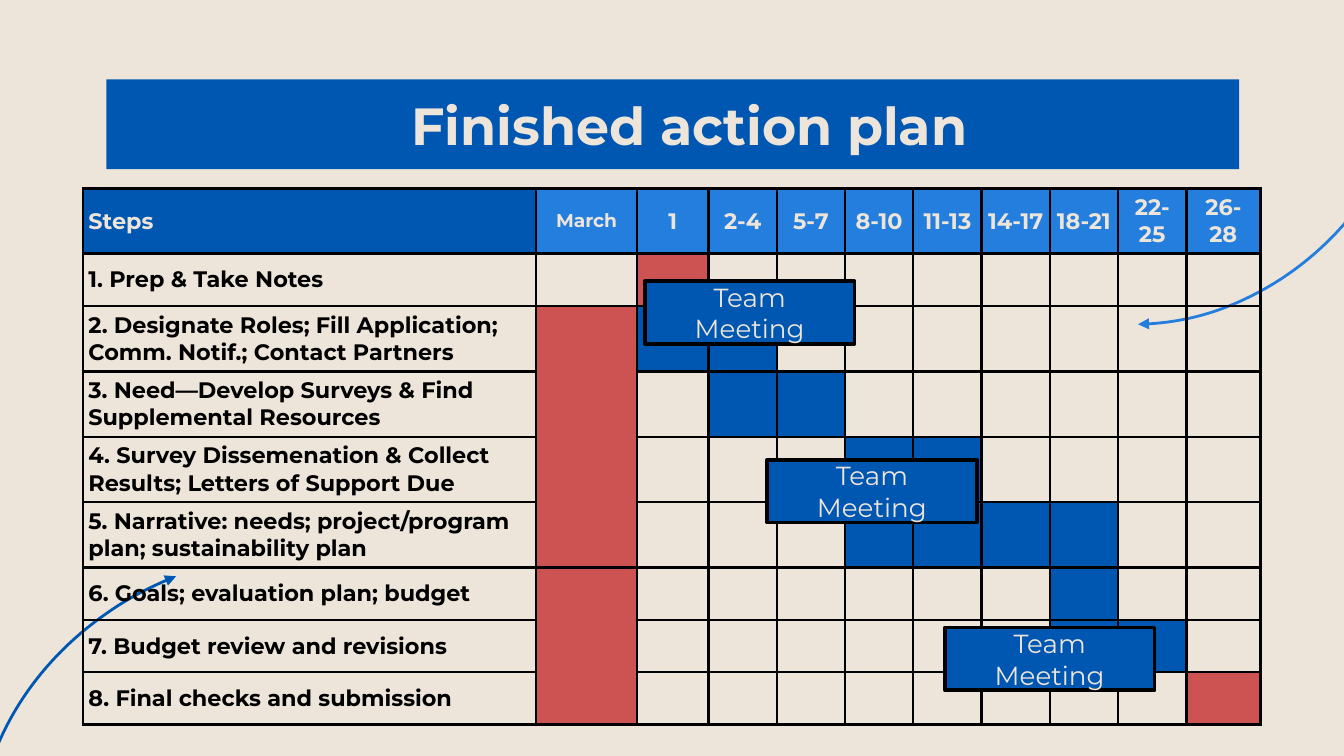
import pptx
import pptx.dml.color
import pptx.enum.shapes
import pptx.enum.text
import pptx.oxml
import pptx.oxml.ns
import pptx.util
from pptx.util import Cm

RGB = pptx.dml.color.RGBColor
CREAM = RGB(0xED, 0xE5, 0xDA)
BLUE = RGB(0x00, 0x57, 0xB2)
SKY = RGB(0x23, 0x7E, 0xDD)
RED = RGB(0xCD, 0x52, 0x52)
BLACK = RGB(0, 0, 0)
FONT = "Montserrat"
SHAPE = pptx.enum.shapes.MSO_SHAPE
ALIGN = pptx.enum.text.PP_ALIGN
MIDDLE = pptx.enum.text.MSO_ANCHOR.MIDDLE

DATES = ["1", "2-4", "5-7", "8-10", "11-13", "14-17", "18-21", "22-25", "26-28"]
# Each step: its text, then first date, last date and colour of its bar
STEPS = [
    ("1. Prep & Take Notes", 0, 0, RED),
    ("2. Designate Roles; Fill Application; Comm. Notif.; Contact Partners", 0, 1, BLUE),
    ("3. Need—Develop Surveys & Find Supplemental Resources", 1, 2, BLUE),
    ("4. Survey Dissemenation & Collect Results; Letters of Support Due", 3, 4, BLUE),
    ("5. Narrative: needs; project/program plan; sustainability plan", 3, 6, BLUE),
    ("6. Goals; evaluation plan; budget", 6, 6, BLUE),
    ("7. Budget review and revisions", 6, 7, BLUE),
    ("8. Final checks and submission", 8, 8, RED),
]
MARCH = [(2, 5), (6, 8)]  # first and last row of each merged block


def write(frame, text, size=12, color=CREAM, bold=False, align=ALIGN.CENTER):
    frame.word_wrap = True
    para = frame.paragraphs[0]
    para.alignment = align
    run = para.add_run()
    run.text = text
    font = run.font
    font.name, font.size, font.bold = FONT, pptx.util.Pt(size), bold
    font.color.rgb = color
    return para


def paint(thing, color):
    thing.fill.solid()
    thing.fill.fore_color.rgb = color


def draw_title(slide, box):
    title = slide.shapes.title
    title.left, title.top, title.width, title.height = box
    paint(title, BLUE)
    frame = title.text_frame
    frame.margin_left = frame.margin_right = frame.margin_top = frame.margin_bottom = 0
    frame.vertical_anchor = MIDDLE
    para = write(frame, "Finished action plan", size=28, bold=True)
    props = para._p.get_or_add_pPr()
    props.set("marL", str(Cm(1.27)))
    props.set("indent", str(-Cm(0.64)))


def draw_arc(slide, box, turn, start, end, color):
    """Draw a mirrored arc with an arrowhead at its start."""
    arc = slide.shapes.add_shape(SHAPE.ARC, *box)
    arc.shadow.inherit = False
    arc.rotation = turn
    arc.adjustments[0], arc.adjustments[1] = start, end
    arc.fill.background()
    arc.line.color.rgb = color
    arc.line.width = pptx.util.Pt(1.5)
    arc._element.spPr.xfrm.set("flipH", "1")
    head = pptx.oxml.parse_xml(f'<a:headEnd {pptx.oxml.ns.nsdecls("a")} type="triangle"/>')
    arc.line._get_or_add_ln().append(head)


def frame_cell(cell):
    """Give a cell black borders, narrow margins and no fill."""
    props = cell._tc.get_or_add_tcPr()
    for i, side in enumerate("LRTB"):
        props.insert(i, pptx.oxml.parse_xml(
            f'<a:ln{side} {pptx.oxml.ns.nsdecls("a")} w="{pptx.util.Pt(1.5)}">'
            f'<a:solidFill><a:srgbClr val="{BLACK}"/></a:solidFill></a:ln{side}>'))
    cell.margin_left = cell.margin_right = cell.margin_top = cell.margin_bottom = Cm(0.1)
    cell.vertical_anchor = MIDDLE
    cell.fill.background()


def draw_plan(slide, box):
    left, top, width, height = box
    heads = ["Steps", "March"] + DATES
    holder = slide.shapes.add_table(len(STEPS) + 1, len(heads), left, top, width, height)
    table = holder.table
    table.first_row = table.horz_banding = False

    widths = [Cm(1.91), Cm(1.35)] + [Cm(1.29)] * 7 + [Cm(1.4)]
    widths.insert(0, width - sum(widths))
    for col, size in zip(table.columns, widths):
        col.width = size
    for row in table.rows:
        row.height = Cm(0.99)
    holder.height = height
    for cell in table.iter_cells():
        frame_cell(cell)

    for i, head in enumerate(heads):
        cell = table.cell(0, i)
        paint(cell, SKY if i else BLUE)
        write(cell.text_frame, head, size=10 if head == "March" else 12, bold=True,
              align=ALIGN.CENTER if i else ALIGN.LEFT)
    for row, (text, first, last, color) in enumerate(STEPS, 1):
        write(table.cell(row, 0).text_frame, text, color=BLACK, bold=True, align=ALIGN.LEFT)
        for date in range(first, last + 1):
            paint(table.cell(row, date + 2), color)
    for first, last in MARCH:
        block = table.cell(first, 1)
        block.merge(table.cell(last, 1))
        paint(block, RED)


def draw_meeting(slide, box):
    label = slide.shapes.add_shape(SHAPE.RECTANGLE, *box)
    label.shadow.inherit = False
    paint(label, BLUE)
    label.line.color.rgb = BLACK
    label.line.width = pptx.util.Pt(2)
    label.text_frame.vertical_anchor = MIDDLE
    write(label.text_frame, "Team Meeting", size=14)


def main():
    deck = pptx.Presentation()
    deck.slide_width, deck.slide_height = Cm(25.4), Cm(14.29)
    slide = deck.slides.add_slide(deck.slide_layouts[5])
    paint(slide.background, CREAM)
    draw_title(slide, (Cm(2.01), Cm(1.5), Cm(21.41), Cm(1.7)))
    draw_arc(slide, (Cm(16.61), Cm(-3.76), Cm(10.62), Cm(9.5)), 124.2, 125.77, 214.97, SKY)
    draw_arc(slide, (Cm(-0.46), Cm(10.44), Cm(12.09), Cm(10.8)), 350.4, 170.95, 214.97, BLUE)
    draw_plan(slide, (Cm(1.57), Cm(3.56), Cm(22.25), Cm(9.98)))
    for left, top in [(14.5, 8.69), (17.86, 11.86), (12.19, 5.31)]:
        draw_meeting(slide, (Cm(left), Cm(top), Cm(3.96), Cm(1.19)))
    deck.save("out.pptx")


if __name__ == "__main__":
    main()
